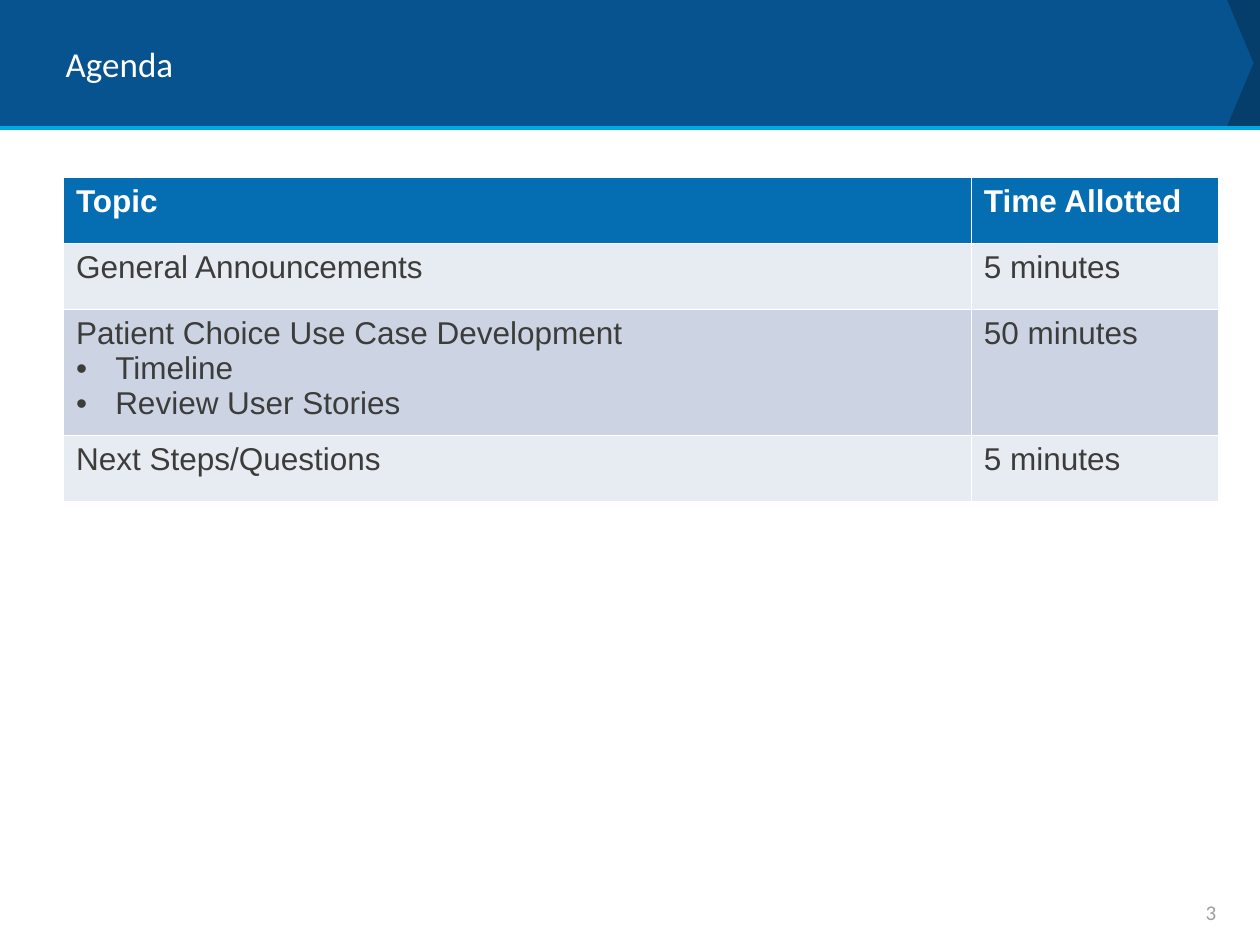
from lxml import etree
from pptx import Presentation
from pptx.dml.color import RGBColor
from pptx.enum.shapes import MSO_CONNECTOR, MSO_SHAPE
from pptx.enum.text import MSO_ANCHOR, PP_ALIGN
from pptx.oxml.ns import qn
from pptx.util import Cm, Pt

LINE = MSO_CONNECTOR.STRAIGHT
ARROW = MSO_SHAPE.PENTAGON
MIDDLE = MSO_ANCHOR.MIDDLE
LEFT, RIGHT = PP_ALIGN.LEFT, PP_ALIGN.RIGHT
TITLE_ONLY = 5

COLORS = {
    "white": "FFFFFF", "navy": "053E6B", "band": "07538F", "rule": "00A8E1",
    "head": "056DB1", "light": "E7EBF2", "dark": "CCD4E4",
    "text": "3C3C3B", "number": "9E9E9C",
}
AGENDA = [
    (["Topic"], ["Time Allotted"]),
    (["General Announcements"], ["5 minutes"]),
    (["Patient Choice Use Case Development", "Timeline",
      "Review User Stories"], ["50 minutes"]),
    (["Next Steps/Questions"], ["5 minutes"]),
]


def color(name):
    return RGBColor.from_string(COLORS[name])


class Deck:
    head_font = "Calibri"
    body_font = "Arial"

    def __init__(self, wide, high):
        self.file = Presentation()
        self.file.slide_width, self.file.slide_height = Cm(wide), Cm(high)
        layout = self.file.slide_layouts[TITLE_ONLY]
        self.slide = self.file.slides.add_slide(layout)
        self.shapes = self.slide.shapes

    def add_text(self, para, text, font, size, tint, bold=False):
        run = para.add_run()
        run.text = text
        run.font.name, run.font.size, run.font.bold = font, Pt(size), bold
        run.font.color.rgb = color(tint)

    def arrow(self, box, tint, point):
        shape = self.shapes.add_shape(ARROW, *map(Cm, box))
        shape.adjustments[0] = point
        shape.shadow.inherit = False
        shape.fill.solid()
        shape.fill.fore_color.rgb = color(tint)
        shape.line.fill.background()

    def rule(self, top, wide, tint, weight):
        line = self.shapes.add_connector(LINE, 0, Cm(top), Cm(wide), Cm(top))
        line.line.color.rgb = color(tint)
        line.line.width = Pt(weight)
        etree.SubElement(line._element.spPr, qn("a:effectLst"))

    def fit(self, shape, box, align):
        """Place a text shape and return its first paragraph."""
        shape.left, shape.top, shape.width, shape.height = map(Cm, box)
        frame = shape.text_frame
        frame.word_wrap = True
        frame.vertical_anchor = MIDDLE
        frame.paragraphs[0].alignment = align
        return frame.paragraphs[0]

    def title(self, text, box):
        shape = self.shapes.title
        para = self.fit(shape, box, LEFT)
        self.add_text(para, text, self.head_font, 20, "white")
        # The title must lie in front of the band.
        self.shapes._spTree.append(shape._element)

    def number(self, text, box):
        shape = self.shapes.add_textbox(*map(Cm, box))
        para = self.fit(shape, box, RIGHT)
        self.add_text(para, text, self.head_font, 12, "number")

    def bullet(self, para):
        props = para._p.get_or_add_pPr()
        props.set("marL", str(Cm(0.79)))
        props.set("indent", str(-Cm(0.79)))
        etree.SubElement(props, qn("a:buFont"), typeface="Arial")
        etree.SubElement(props, qn("a:buChar"), char="•")

    def border(self, cell, tint, weight):
        props = cell._tc.get_or_add_tcPr()
        for side in ("lnL", "lnR", "lnT", "lnB"):
            line = etree.SubElement(props, qn(f"a:{side}"), w=str(Pt(weight)))
            fill = etree.SubElement(line, qn("a:solidFill"))
            etree.SubElement(fill, qn("a:srgbClr"), val=COLORS[tint])

    def cell(self, cell, lines, fill, tint, bold):
        """Fill a cell; lines after the first are bullets."""
        self.border(cell, "white", 1)
        cell.fill.solid()
        cell.fill.fore_color.rgb = color(fill)
        frame = cell.text_frame
        for i, text in enumerate(lines):
            para = frame.add_paragraph() if i else frame.paragraphs[0]
            if i:
                self.bullet(para)
            self.add_text(para, text, self.body_font, 18, tint, bold)

    def table(self, rows, left, top, cols, high):
        table = self.shapes.add_table(
            len(rows), len(cols), Cm(left), Cm(top),
            Cm(sum(cols)), Cm(high * len(rows))).table
        for col, wide in zip(table.columns, cols):
            col.width = Cm(wide)
        for r, row in enumerate(rows):
            table.rows[r].height = Cm(high)
            band = "light" if r % 2 else "dark"
            style = (band, "text", False) if r else ("head", "white", True)
            for c, lines in enumerate(row):
                self.cell(table.cell(r, c), lines, *style)


def main():
    deck = Deck(25.4, 19.05)
    deck.arrow((24.26, 0, 1.14, 2.54), "navy", 0)
    deck.arrow((0, 0, 25.27, 2.54), "band", 0.21)
    deck.rule(2.58, 25.4, "rule", 2.25)
    deck.title("Agenda", (1.07, 0.2, 23.29, 2.16))
    deck.number("3", (18.85, 18.06, 5.92, 0.64))
    deck.table(AGENDA, 1.28, 3.58, (18.3, 4.98), 1.33)
    deck.file.save("out.pptx")


if __name__ == "__main__":
    main()
